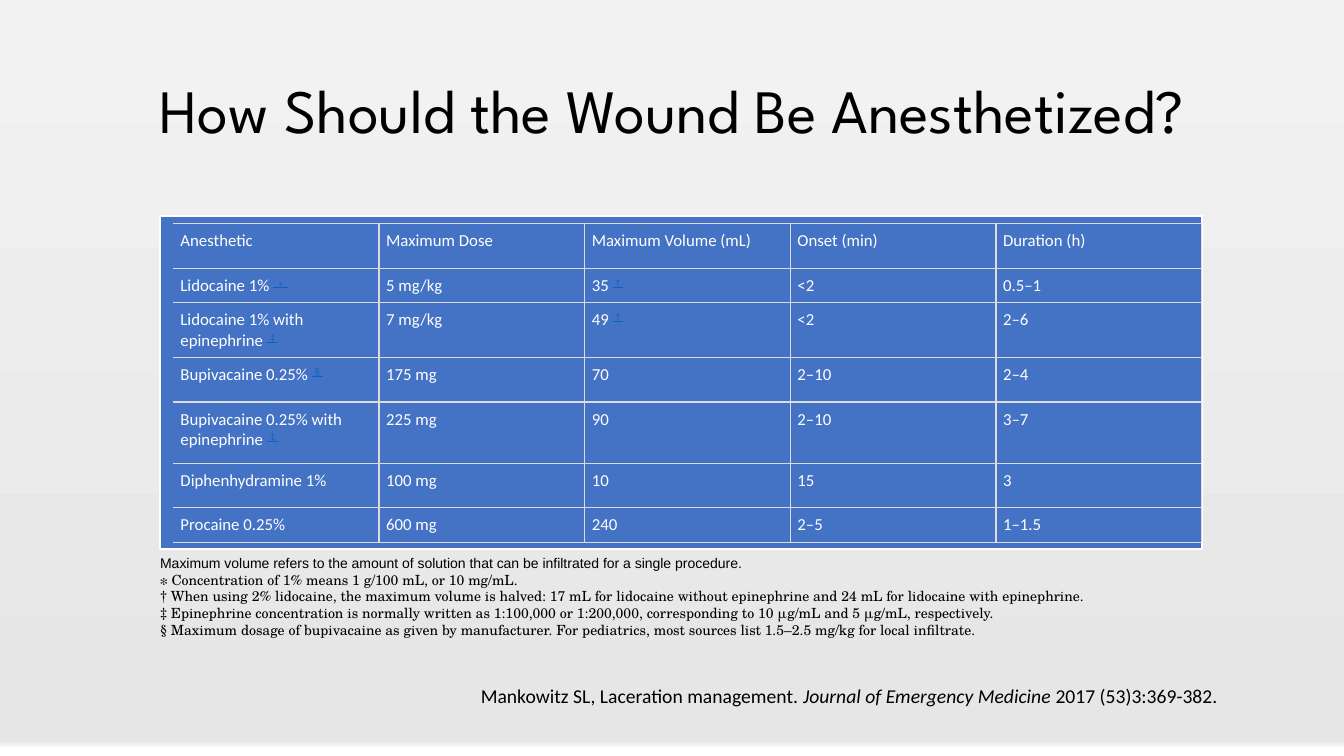
from lxml import etree
from pptx import Presentation
from pptx.dml.color import RGBColor
from pptx.enum.shapes import MSO_SHAPE
from pptx.enum.text import MSO_ANCHOR, MSO_AUTO_SIZE, PP_ALIGN
from pptx.oxml.ns import qn
from pptx.util import Inches, Pt

BLACK = RGBColor(0x00, 0x00, 0x00)
WHITE = RGBColor(0xFF, 0xFF, 0xFF)
BLUE = RGBColor(0x44, 0x72, 0xC4)
MARK_BLUE = RGBColor(0x05, 0x63, 0xC1)
GRID_GRAY = RGBColor(0xDC, 0xDC, 0xDC)
BACKGROUND_STOPS = [
    (1, WHITE),
    (2, RGBColor(0xE7, 0xE6, 0xE6)),
    (100, RGBColor(0xF2, 0xF2, 0xF2)),
]

# Content: a table cell is a text, or a (text, footnote mark) pair
TITLE = "How Should the Wound Be Anesthetized?"
ANESTHETICS = [
    ["Anesthetic", "Maximum Dose", "Maximum Volume (mL)", "Onset (min)", "Duration (h)"],
    [("Lidocaine 1%", "∗"), "5 mg/kg", ("35", "†"), "<2", "0.5–1"],
    [("Lidocaine 1% with epinephrine", "‡"), "7 mg/kg", ("49", "†"), "<2", "2–6"],
    [("Bupivacaine 0.25%", "§"), "175 mg", "70", "2–10", "2–4"],
    [("Bupivacaine 0.25% with epinephrine", "‡"), "225 mg", "90", "2–10", "3–7"],
    ["Diphenhydramine 1%", "100 mg", "10", "15", "3"],
    ["Procaine 0.25%", "600 mg", "240", "2–5", "1–1.5"],
]
ROW_HEIGHTS = [0.44, 0.26, 0.44, 0.44, 0.61, 0.44, 0.26]
COLUMN_WIDTH = 2.04
NOTES = [
    ("Maximum volume refers to the amount of solution that can be infiltrated "
     "for a single procedure.", "Arial"),
    ("∗ Concentration of 1% means 1 g/100 mL, or 10 mg/mL.", "TeX Gyre Schola"),
    ("† When using 2% lidocaine, the maximum volume is halved: 17 mL for lidocaine "
     "without epinephrine and 24 mL for lidocaine with epinephrine.", "TeX Gyre Schola"),
    ("‡ Epinephrine concentration is normally written as 1:100,000 or 1:200,000, "
     "corresponding to 10 μg/mL and 5 μg/mL, respectively.", "TeX Gyre Schola"),
    ("§ Maximum dosage of bupivacaine as given by manufacturer. For pediatrics, most "
     "sources list 1.5–2.5 mg/kg for local infiltrate.", "TeX Gyre Schola"),
]
CITATION = [
    ("Mankowitz SL, Laceration management. ", False),
    ("Journal of Emergency Medicine ", True),
    ("2017 (53)3:369-382.", False),
]


def add_run(paragraph, text, size, font, color):
    run = paragraph.add_run()
    run.text = text
    run.font.size = Pt(size)
    run.font.name = font
    run.font.color.rgb = color
    return run


def set_background(slide):
    fill = slide.background.fill
    fill.gradient()
    fill.gradient_angle = 90
    stop_list = slide.element.find(".//" + qn("a:gsLst"))
    for stop in list(stop_list):
        stop_list.remove(stop)
    for percent, color in BACKGROUND_STOPS:
        stop = etree.SubElement(stop_list, qn("a:gs"), pos=str(percent * 1000))
        etree.SubElement(stop, qn("a:srgbClr"), val=str(color))


def set_borders(cell, has_left):
    properties = cell._tc.get_or_add_tcPr()
    for side in ("lnL", "lnR", "lnT", "lnB"):
        line = etree.SubElement(properties, qn("a:" + side), w=str(Pt(1)))
        if side == "lnL" and not has_left:
            etree.SubElement(line, qn("a:noFill"))
        else:
            fill = etree.SubElement(line, qn("a:solidFill"))
            etree.SubElement(fill, qn("a:srgbClr"), val=str(GRID_GRAY))


def fill_cell(cell, content, has_left):
    text, mark = content if isinstance(content, tuple) else (content, None)
    cell.margin_left = cell.margin_right = Inches(0.07)
    cell.margin_top = cell.margin_bottom = Inches(0.07)
    set_borders(cell, has_left)
    cell.fill.background()
    paragraph = cell.text_frame.paragraphs[0]
    add_run(paragraph, text + (" " if mark else ""), 12, "Calibri", WHITE)
    if mark:
        run = add_run(paragraph, " " + mark + " ", 12, "Arial", MARK_BLUE)
        run.font.underline = True
        run.font._element.set("baseline", "30000")


def add_anesthetics_table(slide):
    columns = len(ANESTHETICS[0])
    frame = slide.shapes.add_table(
        len(ANESTHETICS), columns, Inches(1.72), Inches(2.22),
        Inches(COLUMN_WIDTH * columns), Inches(sum(ROW_HEIGHTS)))
    table = frame.table
    table.first_row = False
    table.horz_banding = False
    for column in table.columns:
        column.width = Inches(COLUMN_WIDTH)
    for row, height in zip(table.rows, ROW_HEIGHTS):
        row.height = Inches(height)
    for row_index, row in enumerate(ANESTHETICS):
        for column_index, content in enumerate(row):
            fill_cell(table.cell(row_index, column_index), content, column_index > 0)


def add_text_box(slide, left, top, width, height, wrap):
    box = slide.shapes.add_textbox(Inches(left), Inches(top), Inches(width), Inches(height))
    box.text_frame.word_wrap = wrap
    box.text_frame.auto_size = MSO_AUTO_SIZE.SHAPE_TO_FIT_TEXT
    return box.text_frame


def main():
    presentation = Presentation()
    presentation.slide_width = Inches(13.33)
    presentation.slide_height = Inches(7.5)
    slide = presentation.slides.add_slide(presentation.slide_layouts[5])
    set_background(slide)

    # Title
    title = slide.shapes.title
    title.left, title.top = Inches(0.92), Inches(0.4)
    title.width, title.height = Inches(11.5), Inches(1.45)
    title.text_frame.vertical_anchor = MSO_ANCHOR.MIDDLE
    title.text_frame.auto_size = MSO_AUTO_SIZE.NONE
    paragraph = title.text_frame.paragraphs[0]
    paragraph.alignment = PP_ALIGN.CENTER
    paragraph.line_spacing = 0.9
    add_run(paragraph, TITLE, 44, "League Spartan", BLACK)

    # Blue panel behind the table
    panel = slide.shapes.add_shape(
        MSO_SHAPE.RECTANGLE, Inches(1.59), Inches(2.14), Inches(10.33), Inches(3.31))
    panel.shadow.inherit = False
    panel.fill.solid()
    panel.fill.fore_color.rgb = BLUE
    panel.line.color.rgb = WHITE
    panel.line.width = Pt(1.5)

    add_anesthetics_table(slide)

    # Footnotes
    notes = add_text_box(slide, 1.49, 5.45, 9.37, 0.94, True)
    for index, (text, font) in enumerate(NOTES):
        paragraph = notes.add_paragraph() if index else notes.paragraphs[0]
        add_run(paragraph, text, 10, font, BLACK)

    # Citation
    citation = add_text_box(slide, 4.67, 6.74, 7.91, 0.34, False)
    for text, italic in CITATION:
        run = add_run(citation.paragraphs[0], text, 14, "Calibri", BLACK)
        run.font.italic = italic

    presentation.save("out.pptx")


if __name__ == "__main__":
    main()
